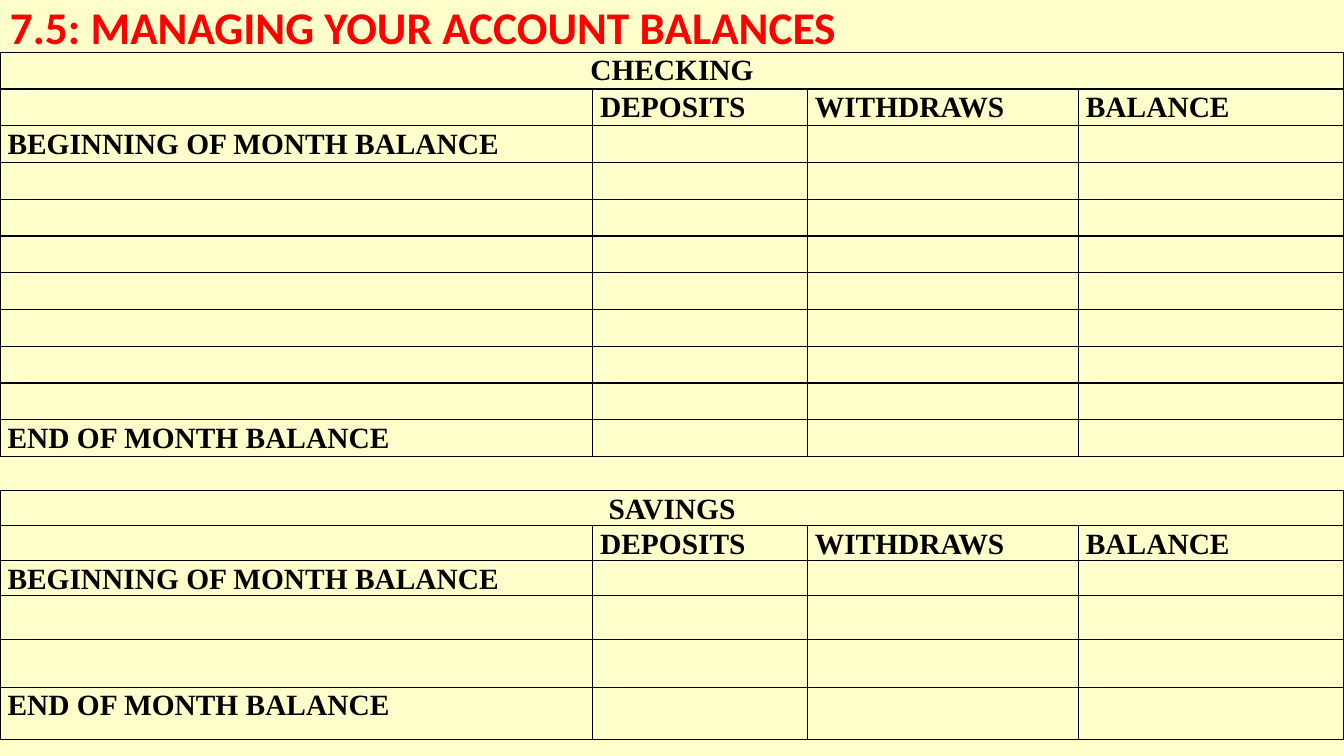
from lxml import etree
from pptx import Presentation
from pptx.dml.color import RGBColor
from pptx.enum import text
from pptx.oxml import ns
from pptx.util import Pt

CREAM = RGBColor(0xFF, 0xFF, 0xCC)
RED = RGBColor(0xFF, 0x00, 0x00)
BLACK = RGBColor(0x00, 0x00, 0x00)

SLIDE_WIDTH, SLIDE_HEIGHT = 960, 540
COLUMN_WIDTHS = [423.3, 153.4, 193.6, 189.7]
HEADINGS = ["", "DEPOSITS", "WITHDRAWS", "BALANCE"]
TITLE_FONT = {"name": "Calibri", "size": Pt(32.4), "bold": True}
LEDGER_FONT = {"name": "Times New Roman", "size": Pt(21), "bold": True}
CELL_FORMAT = {"margin_left": Pt(5.4), "margin_right": Pt(5.4),
               "margin_top": 0, "margin_bottom": 0}
TITLE_FORMAT = {"margin_left": Pt(7.2), "margin_right": Pt(7.2),
                "margin_top": 0, "margin_bottom": 0, "word_wrap": True,
                "auto_size": text.MSO_AUTO_SIZE.NONE,
                "vertical_anchor": text.MSO_ANCHOR.MIDDLE}


def apply_format(target, values):
    for name, value in values.items():
        setattr(target, name, value)


def write(paragraph, words, font, color):
    run = paragraph.add_run()
    run.text = words
    apply_format(run.font, font)
    run.font.color.rgb = color


def add_title(slide, words):
    title = slide.shapes.add_textbox(0, 0, Pt(SLIDE_WIDTH), Pt(37.4))
    apply_format(title.text_frame, TITLE_FORMAT)
    write(title.text_frame.paragraphs[0], words, TITLE_FONT, RED)


def add_borders(cell):
    properties = cell._tc.get_or_add_tcPr()
    for index, side in enumerate(["lnL", "lnR", "lnT", "lnB"]):
        line = etree.Element(ns.qn(f"a:{side}"), w=str(Pt(1)))
        fill = etree.SubElement(line, ns.qn("a:solidFill"))
        etree.SubElement(fill, ns.qn("a:srgbClr"), val=str(BLACK))
        properties.insert(index, line)


def add_ledger(slide, account, top, row_heights):
    frame = slide.shapes.add_table(len(row_heights), len(COLUMN_WIDTHS), 0, Pt(top),
                                   Pt(SLIDE_WIDTH), Pt(sum(row_heights)))
    ledger = frame.table
    apply_format(ledger, {"first_row": False, "horz_banding": False})
    for column, width in zip(ledger.columns, COLUMN_WIDTHS):
        column.width = Pt(width)
    for row, height in zip(ledger.rows, row_heights):
        row.height = Pt(height)
    for cell in ledger.iter_cells():
        apply_format(cell, CELL_FORMAT)
        cell.fill.background()
        add_borders(cell)
    ledger.cell(0, 0).merge(ledger.cell(0, len(COLUMN_WIDTHS) - 1))

    labels = {(0, 0): account, (2, 0): "BEGINNING OF MONTH BALANCE",
              (len(row_heights) - 1, 0): "END OF MONTH BALANCE"}
    labels.update({(1, column): heading for column, heading in enumerate(HEADINGS) if heading})
    for position, label in labels.items():
        paragraph = ledger.cell(*position).text_frame.paragraphs[0]
        paragraph.line_spacing = 1.07
        write(paragraph, label, LEDGER_FONT, BLACK)
    ledger.cell(0, 0).text_frame.paragraphs[0].alignment = text.PP_ALIGN.CENTER


def main():
    deck = Presentation()
    apply_format(deck, {"slide_width": Pt(SLIDE_WIDTH), "slide_height": Pt(SLIDE_HEIGHT)})
    slide = deck.slides.add_slide(deck.slide_layouts[6])
    slide.background.fill.solid()
    slide.background.fill.fore_color.rgb = CREAM
    add_title(slide, "7.5: MANAGING YOUR ACCOUNT BALANCES")
    add_ledger(slide, "CHECKING", 37.4, [26.25] * 11)
    add_ledger(slide, "SAVINGS", 350.5, [25] * 3 + [31.5, 34, 37.5])
    deck.save("out.pptx")


if __name__ == "__main__":
    main()
